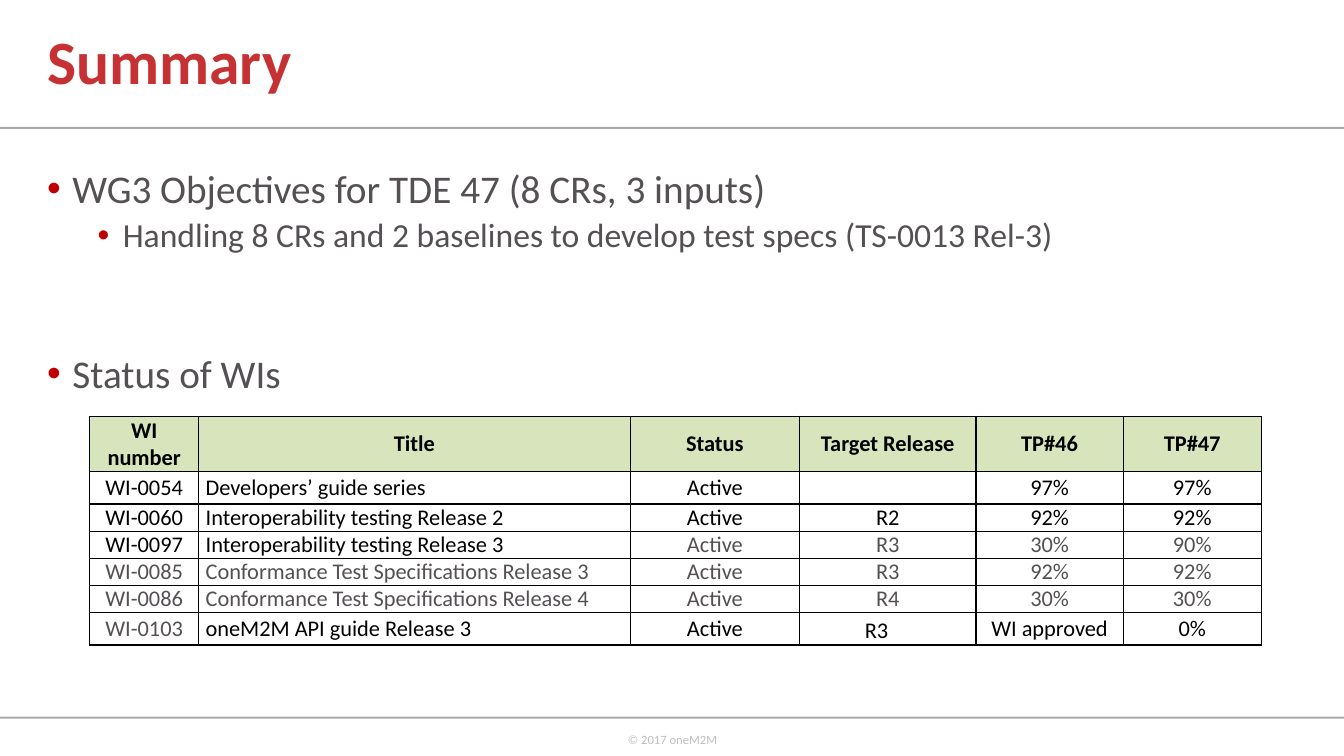
"""Build the summary slide with the work item status table."""
from dataclasses import dataclass

from lxml import etree
from pptx import Presentation
from pptx.dml.color import RGBColor
from pptx.enum.shapes import MSO_SHAPE
from pptx.enum.text import MSO_ANCHOR, PP_ALIGN
from pptx.oxml.ns import qn
from pptx.util import Inches, Pt

LEFT, CENTER = PP_ALIGN.LEFT, PP_ALIGN.CENTER
TOP, MIDDLE = MSO_ANCHOR.TOP, MSO_ANCHOR.MIDDLE
RECTANGLE = MSO_SHAPE.RECTANGLE

BLACK = RGBColor(0x00, 0x00, 0x00)
WHITE = RGBColor(0xFF, 0xFF, 0xFF)
GREY = RGBColor(0x54, 0x50, 0x54)
RULE_GREY = RGBColor(0xA7, 0xA9, 0xAC)
FOOTER_GREY = RGBColor(0xBF, 0xBF, 0xBF)
TITLE_RED = RGBColor(0xC6, 0x31, 0x33)
BULLET_RED = RGBColor(0xC0, 0x00, 0x00)
HEADER_GREEN = RGBColor(0xD8, 0xE4, 0xBC)


@dataclass
class TextLine:
    text: str
    size: int
    color: RGBColor = GREY
    bold: bool = False
    align: PP_ALIGN = LEFT
    spacing: float = 0.9
    before: int = 0
    level: int = 0
    bullet: bool = False


@dataclass
class TextBox:
    left: float
    top: float
    width: float
    height: float
    lines: list[TextLine]
    anchor: MSO_ANCHOR = TOP
    wrap: bool = True


@dataclass
class TableRow:
    height: float
    texts: list[str]
    grey_columns: range = range(0)
    header: bool = False


RULE_TOPS = [1.26, 7.11]
TEXT_BOXES = [
    TextBox(6.12, 7.21, 1.1, 0.4, [
        TextLine("© 2017 oneM2M", 9, FOOTER_GREY, align=CENTER, spacing=1.0),
    ], wrap=False),
    TextBox(0.37, 0, 8.59, 1.28, [TextLine("Summary", 44, TITLE_RED, True)], MIDDLE),
    TextBox(0.37, 1.63, 11.5, 4.76, [
        TextLine("WG3 Objectives for TDE 47 (8 CRs, 3 inputs)", 28, bullet=True),
        TextLine("Handling 8 CRs and 2 baselines to develop test specs (TS-0013 Rel-3)", 24,
                 before=5, level=1, bullet=True),
        TextLine("Status of WIs", 28, before=71, bullet=True),
    ]),
]
COLUMN_WIDTHS = [1.08, 4.28, 1.68, 1.75, 1.46, 1.37]
TITLE_COLUMN = 1
TABLE_ROWS = [
    TableRow(0.55, ["WI number", "Title", "Status", "Target Release", "TP#46", "TP#47"],
             header=True),
    TableRow(0.32, ["WI-0054", "Developers’ guide series", "Active", "", "97%", "97%"]),
    TableRow(0.27, ["WI-0060", "Interoperability testing Release 2", "Active", "R2", "92%", "92%"]),
    TableRow(0.27, ["WI-0097", "Interoperability testing Release 3", "Active", "R3", "30%", "90%"],
             range(2, 6)),
    TableRow(0.27, ["WI-0085", "Conformance Test Specifications Release 3", "Active", "R3",
                    "92%", "92%"], range(6)),
    TableRow(0.27, ["WI-0086", "Conformance Test Specifications Release 4", "Active", "R4",
                    "30%", "30%"], range(6)),
    TableRow(0.32, ["WI-0103", "oneM2M API guide Release 3", "Active", "R3　",
                    "WI approved", "0%"], range(1)),
]


def set_attributes(target, values: dict) -> None:
    for name, value in values.items():
        setattr(target, name, value)


def add_bullet(paragraph, level: int) -> None:
    properties = paragraph._p.get_or_add_pPr()
    properties.set("marL", str(Inches(0.25 + 0.5 * level)))
    properties.set("indent", str(Inches(-0.25)))
    color = etree.SubElement(properties, qn("a:buClr"))
    etree.SubElement(color, qn("a:srgbClr"), val=str(BULLET_RED))
    etree.SubElement(properties, qn("a:buFont"), typeface="Arial")
    etree.SubElement(properties, qn("a:buChar"), char="•")


def write_line(paragraph, line: TextLine) -> None:
    set_attributes(paragraph, {"alignment": line.align, "level": line.level,
                               "line_spacing": line.spacing, "space_before": Pt(line.before)})
    if line.bullet:
        add_bullet(paragraph, line.level)
    if line.text:
        paragraph.add_run().text = line.text
    set_attributes(paragraph.font, {"name": "Calibri", "size": Pt(line.size), "bold": line.bold})
    paragraph.font.color.rgb = line.color
    for run in paragraph.runs:
        set_attributes(run.font, {"name": "Calibri", "size": Pt(line.size), "bold": line.bold})
        run.font.color.rgb = line.color


def add_text_box(slide, box: TextBox) -> None:
    shape = slide.shapes.add_textbox(*map(Inches, (box.left, box.top, box.width, box.height)))
    frame = shape.text_frame
    set_attributes(frame, {"word_wrap": box.wrap, "vertical_anchor": box.anchor})
    for index, line in enumerate(box.lines):
        paragraph = frame.add_paragraph() if index else frame.paragraphs[0]
        write_line(paragraph, line)


def add_rule(slide, top: float) -> None:
    shape = slide.shapes.add_shape(RECTANGLE, 0, Inches(top), Inches(13.33), Inches(0.02))
    shape.shadow.inherit = False
    shape.fill.solid()
    shape.fill.fore_color.rgb = RULE_GREY
    shape.line.fill.background()


def add_borders(cell) -> None:
    properties = cell._tc.get_or_add_tcPr()
    for index, side in enumerate(("a:lnL", "a:lnR", "a:lnT", "a:lnB")):
        border = etree.Element(qn(side), w=str(Pt(1)))
        fill = etree.SubElement(border, qn("a:solidFill"))
        etree.SubElement(fill, qn("a:srgbClr"), val=str(BLACK))
        properties.insert(index, border)


def fill_cell(cell, row: TableRow, column: int) -> None:
    set_attributes(cell, {"margin_left": Inches(0.07), "margin_right": Inches(0.07),
                          "margin_top": 0, "margin_bottom": 0, "vertical_anchor": MIDDLE})
    cell.fill.solid()
    cell.fill.fore_color.rgb = HEADER_GREEN if row.header else WHITE
    color = GREY if column in row.grey_columns else BLACK
    align = LEFT if column == TITLE_COLUMN and not row.header else CENTER
    line = TextLine(row.texts[column], 16, color, row.header, align, 1.0)
    write_line(cell.text_frame.paragraphs[0], line)
    add_borders(cell)


def add_status_table(slide) -> None:
    height = sum(row.height for row in TABLE_ROWS)
    table = slide.shapes.add_table(len(TABLE_ROWS), len(COLUMN_WIDTHS), Inches(0.89), Inches(4.13),
                                   Inches(sum(COLUMN_WIDTHS)), Inches(height)).table
    set_attributes(table, {"first_row": False, "horz_banding": False})
    for column, width in enumerate(COLUMN_WIDTHS):
        table.columns[column].width = Inches(width)
    for index, row in enumerate(TABLE_ROWS):
        table.rows[index].height = Inches(row.height)
        for column in range(len(COLUMN_WIDTHS)):
            fill_cell(table.cell(index, column), row, column)


def main() -> None:
    presentation = Presentation()
    set_attributes(presentation, {"slide_width": Inches(13.33), "slide_height": Inches(7.5)})
    slide = presentation.slides.add_slide(presentation.slide_layouts[6])
    for top in RULE_TOPS:
        add_rule(slide, top)
    for box in TEXT_BOXES:
        add_text_box(slide, box)
    add_status_table(slide)
    presentation.save("out.pptx")


if __name__ == "__main__":
    main()
